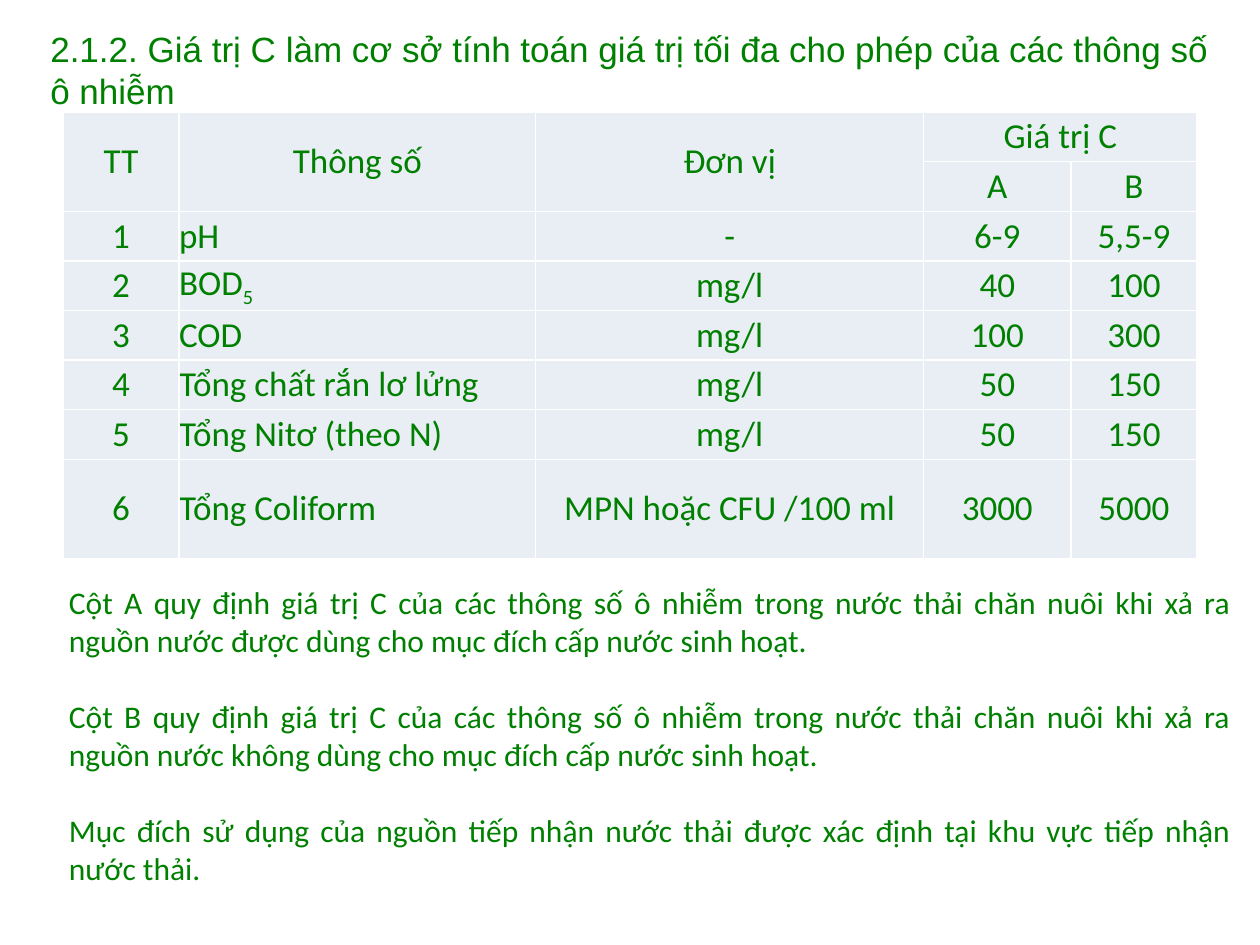
from pptx import Presentation
from pptx.dml.color import RGBColor
from pptx.enum.text import MSO_ANCHOR, MSO_AUTO_SIZE, PP_ALIGN
from pptx.util import Cm, Pt

LEFT, CENTER, JUSTIFY = PP_ALIGN.LEFT, PP_ALIGN.CENTER, PP_ALIGN.JUSTIFY
TOP, MIDDLE = MSO_ANCHOR.TOP, MSO_ANCHOR.MIDDLE
FIT = MSO_AUTO_SIZE.SHAPE_TO_FIT_TEXT
TITLE_ONLY = 5

TITLE = "2.1.2. Giá trị C làm cơ sở tính toán giá trị tối đa cho phép của các thông số ô nhiễm"
ROWS = [
    ["TT", "Thông số", "Đơn vị", "Giá trị C", ""],
    ["", "", "", "A", "B"],
    ["1", "pH", "-", "6-9", "5,5-9"],
    ["2", "BOD_5", "mg/l", "40", "100"],
    ["3", "COD", "mg/l", "100", "300"],
    ["4", "Tổng chất rắn lơ lửng", "mg/l", "50", "150"],
    ["5", "Tổng Nitơ (theo N)", "mg/l", "50", "150"],
    ["6", "Tổng Coliform", "MPN hoặc CFU /100 ml", "3000", "5000"],
]
SPANS = [(0, 0, 1, 0), (0, 1, 1, 1), (0, 2, 1, 2), (0, 3, 0, 4)]
WIDTHS = [2.34, 7.19, 7.82, 2.97, 2.54]
HEIGHTS = [1] * 7 + [2]
NOTES = [
    "Cột A quy định giá trị C của các thông số ô nhiễm trong nước thải chăn nuôi khi xả ra nguồn nước được dùng cho mục đích cấp nước sinh hoạt.",
    "Cột B quy định giá trị C của các thông số ô nhiễm trong nước thải chăn nuôi khi xả ra nguồn nước không dùng cho mục đích cấp nước sinh hoạt.",
    "Mục đích sử dụng của nguồn tiếp nhận nước thải được xác định tại khu vực tiếp nhận nước thải.",
]


def color(code):
    return RGBColor.from_string(code)


class Page:
    ink = "008000"
    shade = "E9EDF4"
    head = "Arial"
    body = "Calibri"

    def __init__(self, deck):
        self.slide = deck.slides.add_slide(deck.slide_layouts[TITLE_ONLY])

    def style(self, par, size, face, align):
        par.alignment = align
        for run in par.runs:
            run.font.size = Pt(size)
            run.font.name = face
            run.font.bold = False
            run.font.color.rgb = color(self.ink)

    def title(self, text, x, y, w, h):
        shape = self.slide.shapes.title
        shape.left, shape.top, shape.width, shape.height = Cm(x), Cm(y), Cm(w), Cm(h)
        frame = shape.text_frame
        frame.text = text
        frame.auto_size = FIT
        frame.vertical_anchor = TOP
        self.style(frame.paragraphs[0], 20, self.head, LEFT)

    def cell(self, cell, text, align):
        cell.fill.solid()
        cell.fill.fore_color.rgb = color(self.shade)
        cell.margin_left = cell.margin_right = 0
        cell.margin_top = cell.margin_bottom = 0
        cell.vertical_anchor = MIDDLE
        main, _, sub = text.partition("_")
        par = cell.text_frame.paragraphs[0]
        par.text = main
        par.space_before = Pt(6)
        if sub:
            run = par.add_run()
            run.text = sub
            run.font._element.set("baseline", "-25000")
        self.style(par, 20, self.body, align)

    def table(self, rows, spans, widths, heights, x, y):
        table = self.slide.shapes.add_table(
            len(rows), len(widths), Cm(x), Cm(y), Cm(sum(widths)), Cm(sum(heights))
        ).table
        table.first_row = table.horz_banding = False
        for col, width in zip(table.columns, widths):
            col.width = Cm(width)
        for row, height in zip(table.rows, heights):
            row.height = Cm(height)
        for r, row in enumerate(rows):
            for c, text in enumerate(row):
                align = LEFT if c == 1 and r > 1 else CENTER
                self.cell(table.cell(r, c), text, align)
        for r, c, low, last in spans:
            table.cell(r, c).merge(table.cell(low, last))

    def notes(self, texts, x, y, w, h):
        frame = self.slide.shapes.add_textbox(Cm(x), Cm(y), Cm(w), Cm(h)).text_frame
        frame.word_wrap = True
        frame.auto_size = FIT
        frame.text = "\n".join(texts)
        for par in frame.paragraphs:
            self.style(par, 18, self.body, JUSTIFY)
        for par in frame.paragraphs[1:]:
            par.space_before = Pt(22)


def main():
    deck = Presentation()
    deck.slide_width, deck.slide_height = Cm(25.4), Cm(19.05)
    page = Page(deck)
    page.title(TITLE, 0.76, 0.43, 24.21, 1.96)
    page.table(ROWS, SPANS, WIDTHS, HEIGHTS, 1.27, 2.26)
    page.notes(NOTES, 1.14, 11.63, 23.93, 6.4)
    deck.save("out.pptx")


if __name__ == "__main__":
    main()
